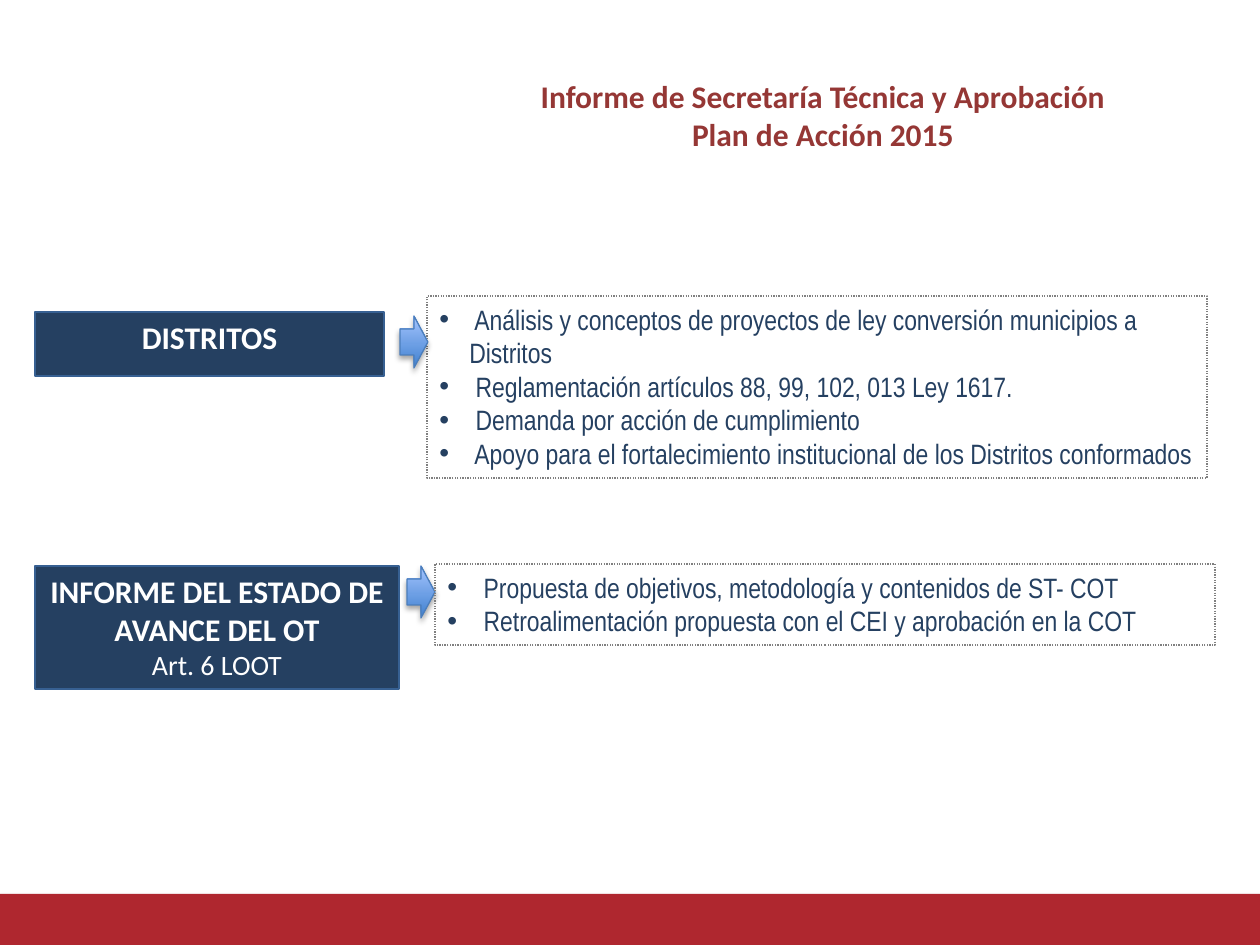
from dataclasses import dataclass

from lxml import etree
from pptx import Presentation
from pptx import util as u
from pptx.dml.color import RGBColor
from pptx.enum import dml, shapes, text
from pptx.oxml.ns import qn

EMU_PER_PX = 914400 / 126


@dataclass(frozen=True)
class Theme:
    navy: str = "254061"
    navy_edge: str = "376092"
    white: str = "FFFFFF"
    maroon: str = "953735"
    red: str = "AF272F"
    grey: str = "808080"
    black: str = "000000"
    arrow_dark: str = "3F80CE"
    arrow_light: str = "A4C4FF"
    arrow_edge: str = "4B7EBC"
    heading_font: str = "Calibri"
    body_font: str = "Arial Narrow"
    heading_size: int = 18
    body_size: int = 16
    line_width: float = 0.75


THEME = Theme()


def px(length):
    return u.Emu(round(length * EMU_PER_PX))


def rgb(code):
    return RGBColor.from_string(code)


def add_block(slide, preset, box, fill=None, edge=None):
    block = slide.shapes.add_shape(preset, *map(px, box))
    if fill:
        block.fill.solid()
        block.fill.fore_color.rgb = rgb(fill)
    else:
        block.fill.background()
    if edge:
        block.line.color.rgb = rgb(edge)
        block.line.width = u.Pt(THEME.line_width)
    else:
        block.line.fill.background()
    block.shadow.inherit = False
    return block


def add_shadow(block, color):
    effects = block._element.spPr.find(qn("a:effectLst"))
    shadow = etree.SubElement(effects, qn("a:outerShdw"), blurRad=str(u.Pt(3.1)),
                              dist=str(u.Pt(1.8)), dir="5400000", rotWithShape="0")
    tint = etree.SubElement(shadow, qn("a:srgbClr"), val=color)
    etree.SubElement(tint, qn("a:alpha"), val="35000")


def prepare_frame(block):
    frame = block.text_frame
    frame.word_wrap = True
    frame.auto_size = text.MSO_AUTO_SIZE.NONE
    frame.vertical_anchor = text.MSO_ANCHOR.TOP
    return frame


def add_paragraph(frame, index, words, font, size, color, bold=False,
                  align=text.PP_ALIGN.CENTER):
    paragraph = frame.paragraphs[0] if index == 0 else frame.add_paragraph()
    paragraph.alignment = align
    run = paragraph.add_run()
    run.text = words
    run.font.name = font
    run.font.size = u.Pt(size)
    run.font.bold = bold
    run.font.color.rgb = rgb(color)
    return paragraph


def add_bullet(paragraph, indent):
    props = paragraph._p.get_or_add_pPr()
    props.set("marL", str(px(indent)))
    props.set("indent", str(-px(indent)))
    etree.SubElement(props, qn("a:buFont"), typeface="Arial")
    etree.SubElement(props, qn("a:buChar"), char="•")


def add_title(slide, box, lines):
    title = slide.shapes.title
    title.left, title.top, title.width, title.height = map(px, box)
    frame = prepare_frame(title)
    for index, line in enumerate(lines):
        add_paragraph(frame, index, line, THEME.heading_font,
                      THEME.heading_size, THEME.maroon, bold=True)


def add_topic(slide, box, heading, note=None):
    topic = add_block(slide, shapes.MSO_SHAPE.RECTANGLE, box,
                      THEME.navy, THEME.navy_edge)
    frame = prepare_frame(topic)
    add_paragraph(frame, 0, heading, THEME.heading_font,
                  THEME.heading_size, THEME.white, bold=True)
    if note:
        add_paragraph(frame, 1, note, THEME.heading_font,
                      THEME.body_size, THEME.white)


def add_arrow(slide, left, top):
    arrow = add_block(slide, shapes.MSO_SHAPE.RIGHT_ARROW, (left, top, 28, 52),
                      edge=THEME.arrow_edge)
    arrow.fill.gradient()
    arrow.fill.gradient_angle = 90
    for stop, color in zip(arrow.fill.gradient_stops,
                           (THEME.arrow_dark, THEME.arrow_light)):
        stop.color.rgb = rgb(color)
    add_shadow(arrow, THEME.black)


def add_details(slide, box, items):
    details = add_block(slide, shapes.MSO_SHAPE.RECTANGLE, box, edge=THEME.grey)
    details.line.dash_style = dml.MSO_LINE.ROUND_DOT
    frame = prepare_frame(details)
    for index, item in enumerate(items):
        # One leading space sets the first line off from its bullet
        paragraph = add_paragraph(frame, index, " " + item, THEME.body_font,
                                  THEME.body_size, THEME.navy,
                                  align=text.PP_ALIGN.LEFT)
        add_bullet(paragraph, 30)


def main():
    deck = Presentation()
    deck.slide_width, deck.slide_height = px(1260), px(945)
    slide = deck.slides.add_slide(deck.slide_layouts[5])

    # Footer band
    band = add_block(slide, shapes.MSO_SHAPE.RECTANGLE, (0, 894, 1260, 51), THEME.red)
    add_shadow(band, THEME.grey)

    # Title
    add_title(slide, (386, 71, 874, 89),
              ["Informe de Secretaría Técnica y Aprobación", "Plan de Acción 2015"])

    # Districts
    add_topic(slide, (35, 312, 349, 64), "DISTRITOS")
    add_details(slide, (427, 296, 780, 182), [
        "Análisis y conceptos de proyectos de ley conversión municipios a Distritos",
        "Reglamentación artículos 88, 99, 102, 013 Ley 1617.",
        "Demanda por acción de cumplimiento",
        "Apoyo para el fortalecimiento institucional de los Distritos conformados",
    ])
    add_arrow(slide, 400, 316)

    # Progress report
    add_topic(slide, (35, 566, 364, 123),
              "INFORME DEL ESTADO DE AVANCE DEL OT", "Art. 6 LOOT")
    add_arrow(slide, 407, 566)
    add_details(slide, (435, 564, 780, 81), [
        "Propuesta de objetivos, metodología y contenidos de ST- COT",
        "Retroalimentación propuesta con el CEI y aprobación en la COT",
    ])

    deck.save("out.pptx")


if __name__ == "__main__":
    main()
